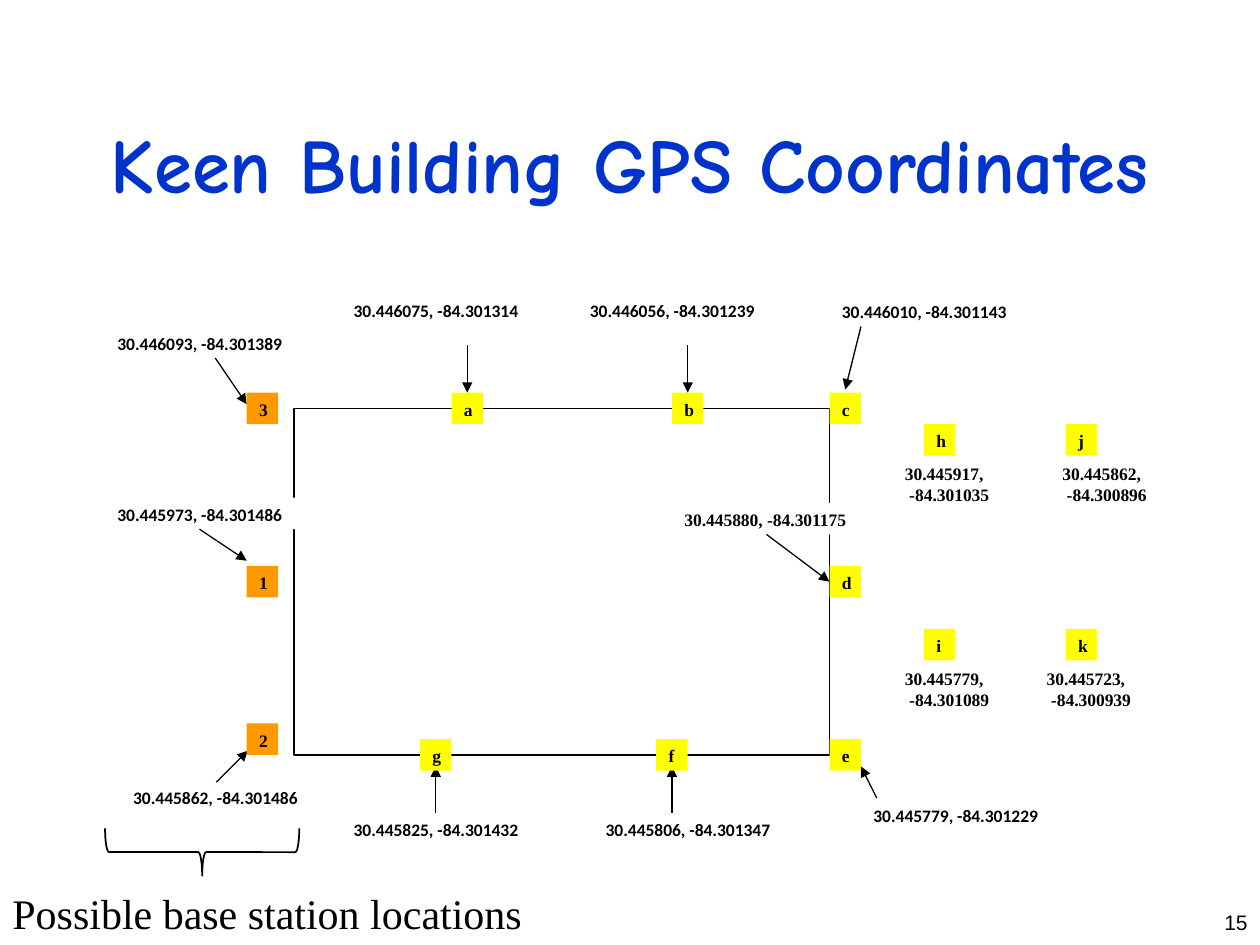
from dataclasses import dataclass

from lxml.etree import SubElement
from pptx import Presentation
from pptx.dml.color import RGBColor
from pptx.enum.shapes import MSO_CONNECTOR, MSO_SHAPE
from pptx.enum.text import MSO_ANCHOR, PP_ALIGN
from pptx.oxml.ns import qn
from pptx.util import Inches, Pt


@dataclass(frozen=True)
class Theme:
    """Colours, fonts and type sizes."""
    ink: str = "000000"
    paper: str = "FFFFFF"
    heading: str = "0033CC"
    station: str = "FF9900"
    point: str = "FFFF00"
    title_font: str = "Comic Neue"
    number_font: str = "Arial"
    label_font: str = "Calibri"
    serif_font: str = "Times New Roman"
    title_size: int = 44
    caption_size: int = 24
    number_size: int = 12
    label_size: int = 10


class Plan:
    """Draws on one slide with a grid of 24 cells to the inch."""

    def __init__(self, slide, theme):
        self.shapes = slide.shapes
        self.theme = theme

    def cells(self, *counts):
        return [Inches(count / 24) for count in counts]

    def set_text(self, shape, lines, font, size, color=None, bold=False,
                 align=PP_ALIGN.LEFT, anchor=MSO_ANCHOR.TOP, wrap=True, after=0):
        frame = shape.text_frame
        frame.word_wrap = wrap
        frame.vertical_anchor = anchor
        frame.text = lines
        for paragraph in frame.paragraphs:
            paragraph.alignment = align
            paragraph.space_after = Pt(after)
            paragraph.font.name = font
            paragraph.font.size = Pt(size)
            paragraph.font.bold = bold
            paragraph.font.color.rgb = RGBColor.from_string(color or self.theme.ink)

    def text(self, box, lines, font, size, **style):
        self.set_text(self.shapes.add_textbox(*self.cells(*box)), lines, font, size, **style)

    def shape(self, kind, box, fill=None, line_width=None):
        shape = self.shapes.add_shape(kind, *self.cells(*box))
        shape.shadow.inherit = False
        if fill:
            shape.fill.solid()
            shape.fill.fore_color.rgb = RGBColor.from_string(fill)
        else:
            shape.fill.background()
        if line_width:
            shape.line.color.rgb = RGBColor.from_string(self.theme.ink)
            shape.line.width = Pt(line_width)
        else:
            shape.line.fill.background()
        return shape

    def label(self, box, lines, font, after=0):
        shape = self.shape(MSO_SHAPE.RECTANGLE, box, self.theme.paper)
        self.set_text(shape, lines, font, self.theme.label_size, bold=True, after=after)

    def marker(self, name, left, top, fill):
        shape = self.shape(MSO_SHAPE.RECTANGLE, (left, top, 6, 6), fill)
        self.set_text(shape, name, self.theme.serif_font, self.theme.label_size, bold=True)

    def arrow(self, *ends):
        connector = self.shapes.add_connector(MSO_CONNECTOR.STRAIGHT, *self.cells(*ends))
        connector.line.color.rgb = RGBColor.from_string(self.theme.ink)
        connector.line.width = Pt(0.75)
        properties = connector._element.spPr
        SubElement(properties.find(qn("a:ln")), qn("a:tailEnd"), type="triangle")
        SubElement(properties, qn("a:effectLst"))


OUTER_LABELS = [
    ("30.445825, -84.301432", 65, 154.8), ("30.445806, -84.301347", 113, 154.8),
    ("30.446075, -84.301314", 65, 56), ("30.446056, -84.301239", 110, 56),
    ("30.446093, -84.301389", 20, 62.2), ("30.445973, -84.301486", 20, 94.8),
    ("30.445862, -84.301486", 23, 148.8), ("30.446010, -84.301143", 158, 56.2),
    ("30.445779, -84.301229", 164, 152.2),
]
SIDE_LABELS = [
    ("30.445862,\n -84.300896", 200, 87), ("30.445723,\n -84.300939", 197, 126),
    ("30.445779,\n -84.301089", 170, 126), ("30.445917,\n -84.301035", 170, 87),
]
ARROWS = [
    (83, 154.8, 83, 146), (128, 154.8, 128, 146), (164, 62.2, 161, 74.2),
    (167, 152, 164, 146), (38, 100.8, 47, 106.8), (41.2, 149, 47.2, 143),
    (41, 68.2, 47, 77), (146, 101.8, 158, 110.8), (89, 65.8, 89, 74.8),
    (131, 65.8, 131, 74.8),
]
STATIONS = [("1", 47, 107.8), ("3", 47, 74.8), ("2", 47, 137.8)]
POINTS = [
    ("g", 80, 140.8), ("f", 125, 140.8), ("e", 158, 140.8), ("d", 158, 107.8),
    ("c", 158, 74.8), ("b", 128, 74.8), ("a", 86, 74.8),
    ("h", 176, 80.8), ("j", 203, 80.8), ("k", 203, 119.8), ("i", 176, 119.8),
]


def main():
    """Build the slide and save it."""
    presentation = Presentation()
    presentation.slide_width, presentation.slide_height = Inches(10), Inches(7.5)
    slide = presentation.slides.add_slide(presentation.slide_layouts[6])
    theme = Theme()
    plan = Plan(slide, theme)

    plan.text((18, 16, 204, 30), "Keen Building GPS Coordinates", theme.title_font,
              theme.title_size, color=theme.heading, bold=True,
              align=PP_ALIGN.CENTER, anchor=MSO_ANCHOR.MIDDLE)
    plan.text((222, 172, 18, 8), "15", theme.number_font, theme.number_size,
              align=PP_ALIGN.RIGHT)

    plan.shape(MSO_SHAPE.RECTANGLE, (56, 77.8, 102, 66), theme.paper, 0.75)
    for lines, left, top in OUTER_LABELS:
        plan.label((left, top, 39, 6), lines, theme.label_font, after=10)
    plan.label((128, 95.8, 39, 6), "30.445880, -84.301175", theme.serif_font)
    for lines, left, top in SIDE_LABELS:
        plan.label((left, top, 21, 9), lines, theme.serif_font)
    for ends in ARROWS:
        plan.arrow(*ends)
    for markers, fill in ((STATIONS, theme.station), (POINTS, theme.point)):
        for name, left, top in markers:
            plan.marker(name, left, top, fill)

    brace = plan.shape(MSO_SHAPE.RIGHT_BRACE, (34, 143.8, 9, 37), line_width=1)
    brace.rotation = 90
    plan.text((0, 167.8, 102.8, 12.2), "Possible base station locations",
              theme.serif_font, theme.caption_size, wrap=False)
    presentation.save("out.pptx")


if __name__ == "__main__":
    main()
